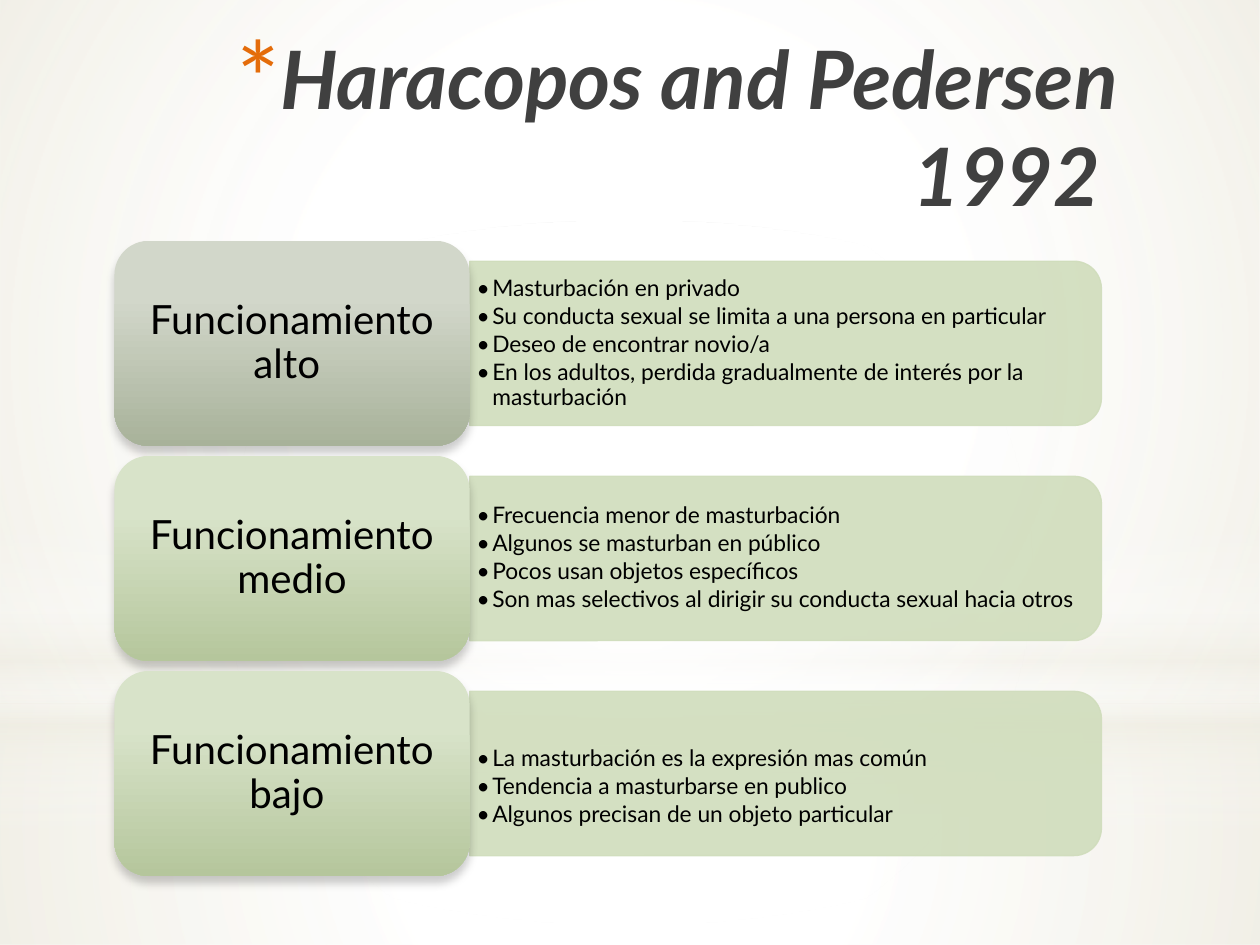
"""Build the slide on three levels of functioning as described by Haracopos and Pedersen."""
from lxml.etree import SubElement
from pptx import Presentation
from pptx.dml.color import RGBColor
from pptx.enum.shapes import MSO_SHAPE
from pptx.enum.text import MSO_ANCHOR, PP_ALIGN
from pptx.oxml.ns import qn
from pptx.util import Pt

HEADING = "Haracopos and Pedersen 1992 "
LEVELS = [
    ("Funcionamiento alto ", "sage", 0, [
        "Masturbación en privado",
        "Su conducta sexual se limita a una persona en particular",
        "Deseo de encontrar novio/a",
        "En los adultos, perdida gradualmente de interés por la masturbación",
    ]),
    ("Funcionamiento medio", "green", 0, [
        "Frecuencia menor de masturbación",
        "Algunos se masturban en público",
        "Pocos usan objetos específicos",
        "Son mas selectivos al dirigir su conducta sexual hacia otros",
    ]),
    ("Funcionamiento bajo ", "green", 16, [
        "La masturbación es la expresión mas común",
        "Tendencia a masturbarse en publico",
        "Algunos precisan de un objeto particular",
    ]),
]
COLORS = {
    "white": "FFFFFF", "cream": "EEECE1", "black": "000000", "heading": "404040",
    "star": "E46C0A", "panel": "D0DDBC", "sage": "D2D7CA", "sage_dark": "A8B29A",
    "green": "D8E3C9", "green_dark": "B5C69C",
}
BACKDROP = [
    (MSO_SHAPE.RECTANGLE, (0, 401.8, 720, 138.2), True,
     [(0, "white", 91), (37, "white", 76), (100, "cream", 79)]),
    (MSO_SHAPE.RECTANGLE, (0, 0, 720, 401.8), True,
     [(0, "white", 89), (48, "white", 62), (100, "cream", 79)]),
    (MSO_SHAPE.RECTANGLE, (0, 296.6, 720, 180), False,
     [(0, "white", 0), (29, "white", 30), (45, "cream", 40),
      (55, "white", 26), (65, "cream", 60), (100, "white", 0)]),
    (MSO_SHAPE.OVAL, (0, 126, 720, 401.8), True,
     [(0, "white", 100), (56, "white", 0)]),
]
FORMATS = {
    "heading": {"font": {"size": Pt(46), "bold": True, "italic": True},
                "paragraph": {"alignment": PP_ALIGN.RIGHT}, "color": "heading"},
    "level": {"font": {"size": Pt(23)},
              "paragraph": {"alignment": PP_ALIGN.CENTER, "line_spacing": 0.9},
              "color": "black"},
    "trait": {"font": {"size": Pt(13)},
              "paragraph": {"alignment": PP_ALIGN.LEFT, "line_spacing": 0.9,
                            "space_after": Pt(2)}, "color": "black"},
}
LEFT, TOP, PITCH = 65.4, 137.6, 122.9
LEVEL_WIDTH, LEVEL_HEIGHT = 203, 117.2
PANEL_WIDTH, PANEL_HEIGHT = 361, 93.9
TRAITS_WIDTH, TRAITS_HEIGHT = 356.4, 84.2


def set_attributes(target, values):
    for name, value in values.items():
        setattr(target, name, value)


def add_color(parent, color, alpha):
    srgb = SubElement(parent, qn("a:srgbClr"), val=COLORS[color])
    SubElement(srgb, qn("a:alpha"), val=str(alpha * 1000))


def add_plain_shape(slide, kind, box):
    shape = slide.shapes.add_shape(kind, *map(Pt, box))
    shape.shadow.inherit = False
    shape.fill.background()
    shape.line.fill.background()
    return shape


def fill_gradient(shape, stops, radial=False):
    properties = shape.element.spPr
    empty = properties.find(qn("a:noFill"))
    gradient = SubElement(properties, qn("a:gradFill"), rotWithShape="1")
    stop_list = SubElement(gradient, qn("a:gsLst"))
    for position, color, alpha in stops:
        add_color(SubElement(stop_list, qn("a:gs"), pos=str(position * 1000)), color, alpha)
    if radial:
        focus = SubElement(gradient, qn("a:path"), path="circle")
        SubElement(focus, qn("a:fillToRect"), l="50000", t="50000", r="50000", b="50000")
    else:
        SubElement(gradient, qn("a:lin"), ang="5400000", scaled="0")
    properties.replace(empty, gradient)


def write(frame, lines, style, insets, anchor):
    sides = ("margin_left", "margin_top", "margin_right", "margin_bottom")
    set_attributes(frame, dict(zip(sides, map(Pt, insets))))
    set_attributes(frame, {"word_wrap": True, "vertical_anchor": anchor})
    for index, line in enumerate(lines):
        paragraph = frame.paragraphs[0] if index == 0 else frame.add_paragraph()
        set_attributes(paragraph, style["paragraph"])
        run = paragraph.add_run()
        run.text = line
        set_attributes(run.font, {"name": "Lato", **style["font"]})
        run.font.color.rgb = RGBColor.from_string(COLORS[style["color"]])


def add_bullets(frame, symbol, indent, color, size):
    for paragraph in frame.paragraphs:
        properties = paragraph._p.get_or_add_pPr()
        properties.set("marL", str(Pt(indent)))
        properties.set("indent", str(-Pt(indent)))
        add_color(SubElement(properties, qn("a:buClr")), color, 100)
        SubElement(properties, qn("a:buSzPct"), val=str(size * 1000))
        SubElement(properties, qn("a:buFont"), typeface="Lato")
        SubElement(properties, qn("a:buChar"), char=symbol)


def add_panel(slide, left, middle):
    box = (left + (PANEL_WIDTH - PANEL_HEIGHT) / 2, middle - PANEL_WIDTH / 2,
           PANEL_HEIGHT, PANEL_WIDTH)
    panel = add_plain_shape(slide, MSO_SHAPE.ROUND_2_SAME_RECTANGLE, box)
    panel.rotation = 90
    panel.line.width = Pt(0.75)
    for fill in (panel.fill, panel.line.fill):
        fill.solid()
        fill.fore_color.rgb = RGBColor.from_string(COLORS["panel"])
    for srgb in panel.element.spPr.iter(qn("a:srgbClr")):
        SubElement(srgb, qn("a:alpha"), val="90000")


def add_level(slide, top, name, tone, extra_top, traits):
    middle, traits_left = top + LEVEL_HEIGHT / 2, LEFT + LEVEL_WIDTH
    add_panel(slide, traits_left, middle)
    traits_box = (traits_left, middle - TRAITS_HEIGHT / 2, TRAITS_WIDTH, TRAITS_HEIGHT)
    frame = slide.shapes.add_textbox(*map(Pt, traits_box)).text_frame
    write(frame, traits, FORMATS["trait"], (3.9, 2 + extra_top, 3.9, 2), MSO_ANCHOR.MIDDLE)
    add_bullets(frame, "•", 9, "black", 100)

    level = add_plain_shape(slide, MSO_SHAPE.ROUNDED_RECTANGLE,
                            (LEFT, top, LEVEL_WIDTH, LEVEL_HEIGHT))
    fill_gradient(level, [(28, tone, 100), (100, tone + "_dark", 100)])
    shadow = SubElement(level.element.spPr.find(qn("a:effectLst")), qn("a:outerShdw"),
                        blurRad=str(Pt(5)), dist=str(Pt(4)), dir="5400000", rotWithShape="0")
    add_color(shadow, "black", 20)
    write(level.text_frame, [name], FORMATS["level"], (7, 3.6, 7, 3.6), MSO_ANCHOR.MIDDLE)


def main():
    presentation = Presentation()
    presentation.slide_width, presentation.slide_height = Pt(720), Pt(540)
    slide = presentation.slides.add_slide(presentation.slide_layouts[6])
    for kind, box, radial, stops in BACKDROP:
        fill_gradient(add_plain_shape(slide, kind, box), stops, radial)
    heading = slide.shapes.add_textbox(Pt(33), Pt(13), Pt(612.7), Pt(90)).text_frame
    write(heading, [HEADING], FORMATS["heading"], (7.2, 3.6, 7.2, 3.6), MSO_ANCHOR.TOP)
    add_bullets(heading, "*", 25.2, "star", 128)
    for row, level in enumerate(LEVELS):
        add_level(slide, TOP + row * PITCH, *level)
    presentation.save("out.pptx")


if __name__ == "__main__":
    main()
